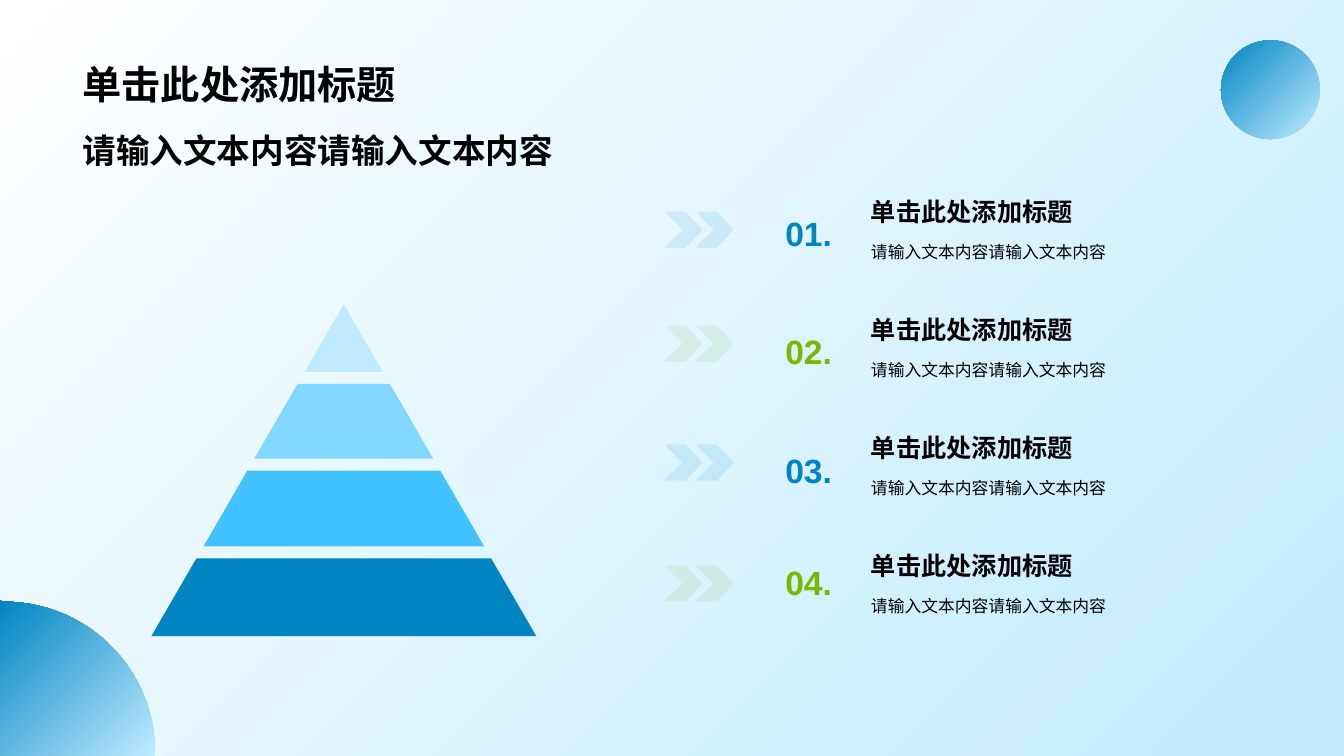
from math import cos, pi, sin

from lxml.etree import SubElement
from pptx import Presentation
from pptx.dml.color import RGBColor
from pptx.enum.lang import MSO_LANGUAGE_ID as Lang
from pptx.enum.shapes import MSO_SHAPE as Shape
from pptx.enum.text import MSO_ANCHOR as Anchor, MSO_AUTO_SIZE as Fit, PP_ALIGN as Align
from pptx.oxml.ns import qn
from pptx.util import Inches, Pt

FONT = "Arial"
BLUE, GREEN, PALE = "0085C3", "7AB800", "C0EBFF"
HEAD, BODY = "单击此处添加标题", "请输入文本内容请输入文本内容"

# Pyramid: apex, half width gained per inch of height, and bands
APEX_X, APEX_Y, SLOPE = 3.41, 3.02, 0.58
BANDS = [
    (5.54, 6.31, BLUE),
    (4.67, 5.42, "42C3FF"),
    (3.81, 4.55, "81D7FF"),
    (3.02, 3.69, PALE),
]

# Top of the number, top of the arrow, colour
ITEMS = [
    (2.06, 2.1, BLUE),
    (3.23, 3.23, GREEN),
    (4.41, 4.41, BLUE),
    (5.53, 5.61, GREEN),
]
ITEM_TOP, ITEM_STEP = 1.8, 1.17

# One arrowhead with slightly cut corners
ARROW = [
    (0.01, 0), (0.2, 0), (0.36, 0.17), (0.36, 0.19), (0.2, 0.36), (0.01, 0.36),
    (0, 0.35), (0.01, 0.33), (0.17, 0.18), (0.01, 0.02), (0, 0.01),
]


def color(code):
    return RGBColor.from_string(code)


def shade(fill, start, end):
    """Blend from start at the lower right to end at the upper left."""
    fill.gradient()
    fill.gradient_angle = 135
    for stop, code in zip(fill.gradient_stops, (start, end)):
        stop.color.rgb = color(code)


def plain(shape):
    shape.shadow.inherit = False
    shape.line.fill.background()
    return shape


def paint(shape, code, alpha=None):
    shape.fill.solid()
    shape.fill.fore_color.rgb = color(code)
    if alpha is not None:
        tint = shape.fill._xPr.find(qn("a:solidFill"))[0]
        SubElement(tint, qn("a:alpha")).set("val", str(alpha * 1000))


def outline(shapes, *rings):
    """Draw closed rings of points, in inches, as one shape."""
    rings = [[(Inches(x), Inches(y)) for x, y in ring] for ring in rings]
    pen = shapes.build_freeform(*rings[0][0])
    for i, ring in enumerate(rings):
        if i:
            pen.move_to(*ring[0])
        pen.add_line_segments(ring[1:], close=True)
    return plain(pen.convert_to_shape())


def write(frame, text, size, code="000000", bold=False, anchor=Anchor.TOP,
          wrap=True, fit=Fit.NONE, space=None):
    frame.word_wrap = wrap
    frame.auto_size = fit
    frame.vertical_anchor = anchor
    para = frame.paragraphs[0]
    para.alignment = Align.LEFT
    if space:
        para.line_spacing = space
    run = para.add_run()
    run.text = text
    font = run.font
    font.name, font.size, font.bold = FONT, Pt(size), bold
    font.color.rgb = color(code)
    font.language_id = Lang.SIMPLIFIED_CHINESE
    SubElement(font._element, qn("a:ea")).set("typeface", FONT)


def label(shapes, box, text, size, **style):
    frame = shapes.add_textbox(*map(Inches, box)).text_frame
    write(frame, text, size, **style)


def decor(shapes):
    mid_x, mid_y, rad, steps = 0.04, 7.47, 1.5, 60
    arc = [(mid_x + rad * sin(a), mid_y - rad * cos(a))
           for a in (pi / 2 * i / steps for i in range(steps + 1))]
    corner = outline(shapes, [(0, 5.96), *arc, (1.54, 7.5), (0, 7.5)])
    disc = plain(shapes.add_shape(
        Shape.OVAL, Inches(12.11), Inches(0.4), Inches(0.98), Inches(0.98)))
    for shape in (corner, disc):
        shade(shape.fill, PALE, BLUE)


def pyramid(shapes):
    for top, foot, code in BANDS:
        high, low = (SLOPE * (y - APEX_Y) for y in (top, foot))
        band = outline(shapes, [
            (APEX_X - high, top), (APEX_X + high, top),
            (APEX_X + low, foot), (APEX_X - low, foot)])
        paint(band, code)


def item(shapes, index, num_top, arrow_top, code):
    top = ITEM_TOP + ITEM_STEP * index
    label(shapes, (8.54, top, 4.05, 0.5), HEAD, 18, bold=True, anchor=Anchor.BOTTOM)
    label(shapes, (8.54, top + 0.51, 4.05, 0.5), BODY, 12, space=1.2)
    label(shapes, (7.69, num_top, 0.67, 0.5), f"{index + 1:02}.", 24, code=code,
          bold=True, wrap=False, fit=Fit.SHAPE_TO_FIT_TEXT)
    rings = [[(left + x, arrow_top + y) for x, y in ARROW] for left in (6.91, 6.6)]
    paint(outline(shapes, *rings), code, alpha=10)


def main():
    deck = Presentation()
    deck.slide_width, deck.slide_height = Inches(13.33), Inches(7.5)
    slide = deck.slides.add_slide(deck.slide_layouts[5])
    shade(slide.background.fill, PALE, "FFFFFF")
    shapes = slide.shapes
    decor(shapes)

    title = shapes.title
    title.left, title.top = Inches(0.72), Inches(0.14)
    title.width, title.height = Inches(11.88), Inches(0.98)
    write(title.text_frame, HEAD, 28, bold=True, anchor=Anchor.BOTTOM)
    label(shapes, (0.72, 1.24, 6.23, 0.74), BODY, 24, bold=True)

    pyramid(shapes.add_group_shape().shapes)
    for index, row in enumerate(ITEMS):
        item(shapes.add_group_shape().shapes, index, *row)
    deck.save("out.pptx")


if __name__ == "__main__":
    main()
